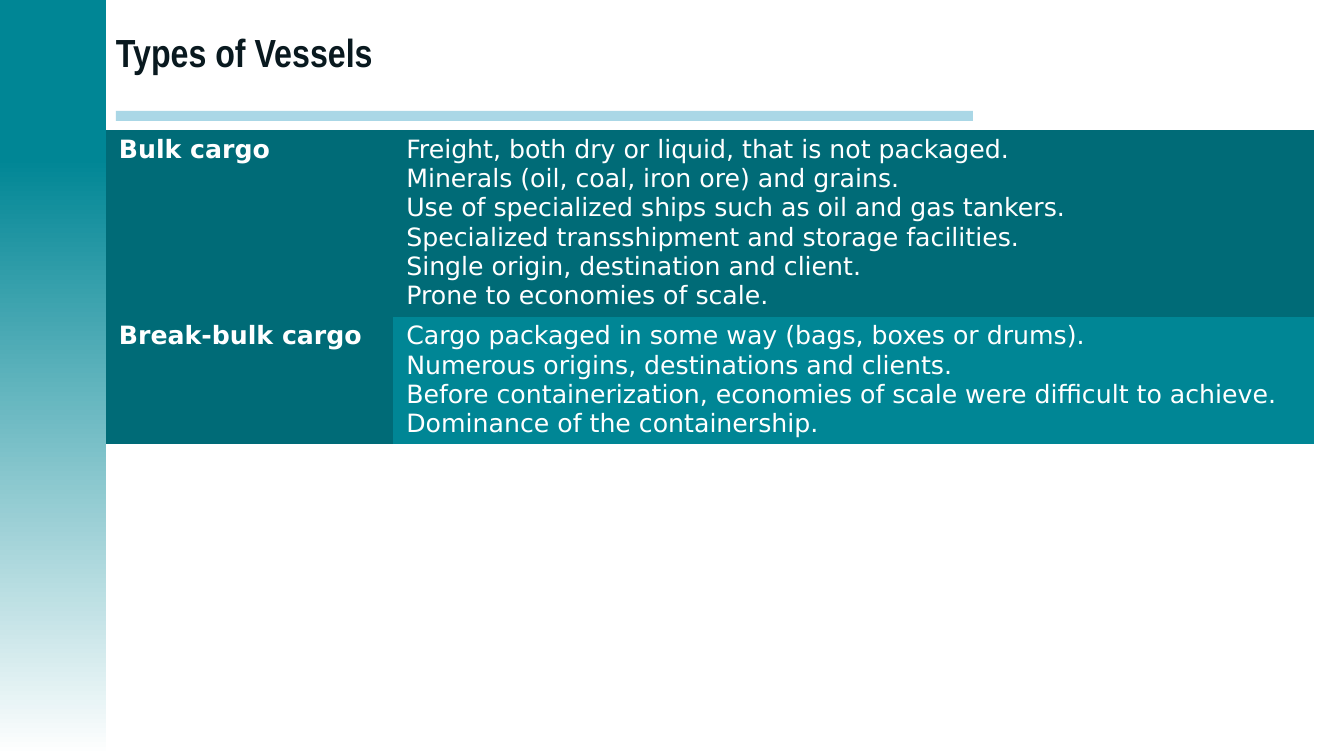
"""Build the slide on types of vessels."""
from dataclasses import dataclass

from lxml.etree import SubElement
from pptx import Presentation
from pptx.dml.color import RGBColor
from pptx.enum.shapes import MSO_SHAPE
from pptx.enum.text import MSO_ANCHOR, PP_ALIGN
from pptx.oxml.ns import qn
from pptx.slide import Slide
from pptx.table import _Cell
from pptx.text.text import TextFrame
from pptx.util import Inches, Pt

TEAL, DARK, PALE, WHITE, INK = "008695", "006B77", "AAD7E6", "FFFFFF", "09191F"


@dataclass
class Bar:
    left: float
    top: float
    width: float
    height: float
    fill: str
    fade: str = ""


@dataclass
class Cargo:
    name: str
    facts: list[str]
    height: float
    fill: str


BARS = [
    Bar(-0.02, -0.01, 1.07, 1.58, TEAL),
    Bar(-0.02, 1.57, 1.07, 5.93, TEAL, WHITE),
    Bar(1.15, 1.1, 8.5, 0.1, PALE),
]
CARGOES = [
    Cargo("Bulk cargo", [
        "Freight, both dry or liquid, that is not packaged.",
        "Minerals (oil, coal, iron ore) and grains.",
        "Use of specialized ships such as oil and gas tankers.",
        "Specialized transshipment and storage facilities.",
        "Single origin, destination and client.",
        "Prone to economies of scale.",
    ], 1.85, DARK),
    Cargo("Break-bulk cargo", [
        "Cargo packaged in some way (bags, boxes or drums).",
        "Numerous origins, destinations and clients.",
        "Before containerization, economies of scale were difficult to achieve.",
        "Dominance of the containership.",
    ], 1.26, TEAL),
]


def tint(code: str) -> RGBColor:
    """Turn a hex string into a colour."""
    return RGBColor.from_string(code)


def write(frame: TextFrame, lines: list[str], *, font: str = "DejaVu Sans",
          size: float = 18, color: str = WHITE, bold: bool = False) -> None:
    """Fill a text frame with one left-aligned paragraph per line."""
    frame.word_wrap = True
    for i, line in enumerate(lines):
        para = frame.add_paragraph() if i else frame.paragraphs[0]
        para.alignment = PP_ALIGN.LEFT
        run = para.add_run()
        run.text = line
        run.font.name, run.font.size, run.font.bold = font, Pt(size), bold
        run.font.color.rgb = tint(color)


def draw_bar(slide: Slide, bar: Bar) -> None:
    """Draw a plain bar, or one that fades downwards."""
    shape = slide.shapes.add_shape(
        MSO_SHAPE.RECTANGLE, Inches(bar.left), Inches(bar.top),
        Inches(bar.width), Inches(bar.height))
    shape.shadow.inherit = False
    shape.line.fill.background()
    if bar.fade:
        shape.fill.gradient()
        shape.fill.gradient_angle = 270
        for stop, code in zip(shape.fill.gradient_stops, (bar.fill, bar.fade)):
            stop.color.rgb = tint(code)
    else:
        shape.fill.solid()
        shape.fill.fore_color.rgb = tint(bar.fill)


def fill_cell(cell: _Cell, lines: list[str], fill: str, bold: bool) -> None:
    """Write a cell without borders on a solid fill."""
    cell.margin_left = cell.margin_right = Inches(0.13)
    cell.margin_top = cell.margin_bottom = Inches(0.05)
    props = cell._tc.get_or_add_tcPr()
    for side in ("a:lnL", "a:lnR", "a:lnT", "a:lnB"):
        SubElement(SubElement(props, qn(side), w="0"), qn("a:noFill"))
    cell.fill.solid()
    cell.fill.fore_color.rgb = tint(fill)
    write(cell.text_frame, lines, bold=bold)


def draw_table(slide: Slide, cargoes: list[Cargo]) -> None:
    """Draw one table row per kind of cargo."""
    table = slide.shapes.add_table(
        len(cargoes), 2, Inches(1.05), Inches(1.29), Inches(11.98),
        Inches(sum(cargo.height for cargo in cargoes))).table
    table.first_row = table.horz_banding = False
    table.first_col = True
    for col, width in zip(table.columns, (2.85, 9.13)):
        col.width = Inches(width)
    for i, cargo in enumerate(cargoes):
        table.rows[i].height = Inches(cargo.height)
        fill_cell(table.cell(i, 0), [cargo.name], DARK, True)
        fill_cell(table.cell(i, 1), cargo.facts, cargo.fill, False)


def main() -> None:
    """Build and save the deck."""
    deck = Presentation()
    deck.slide_width, deck.slide_height = Inches(13.33), Inches(7.5)
    slide = deck.slides.add_slide(deck.slide_layouts[5])
    for bar in BARS:
        draw_bar(slide, bar)
    title = slide.shapes.title
    title.left, title.top = Inches(1.05), Inches(0.01)
    title.width, title.height = Inches(11.98), Inches(1)
    title.text_frame.vertical_anchor = MSO_ANCHOR.MIDDLE
    write(title.text_frame, ["Types of Vessels"], font="Arial Narrow",
          size=28, color=INK, bold=True)
    draw_table(slide, CARGOES)
    deck.save("out.pptx")


if __name__ == "__main__":
    main()
